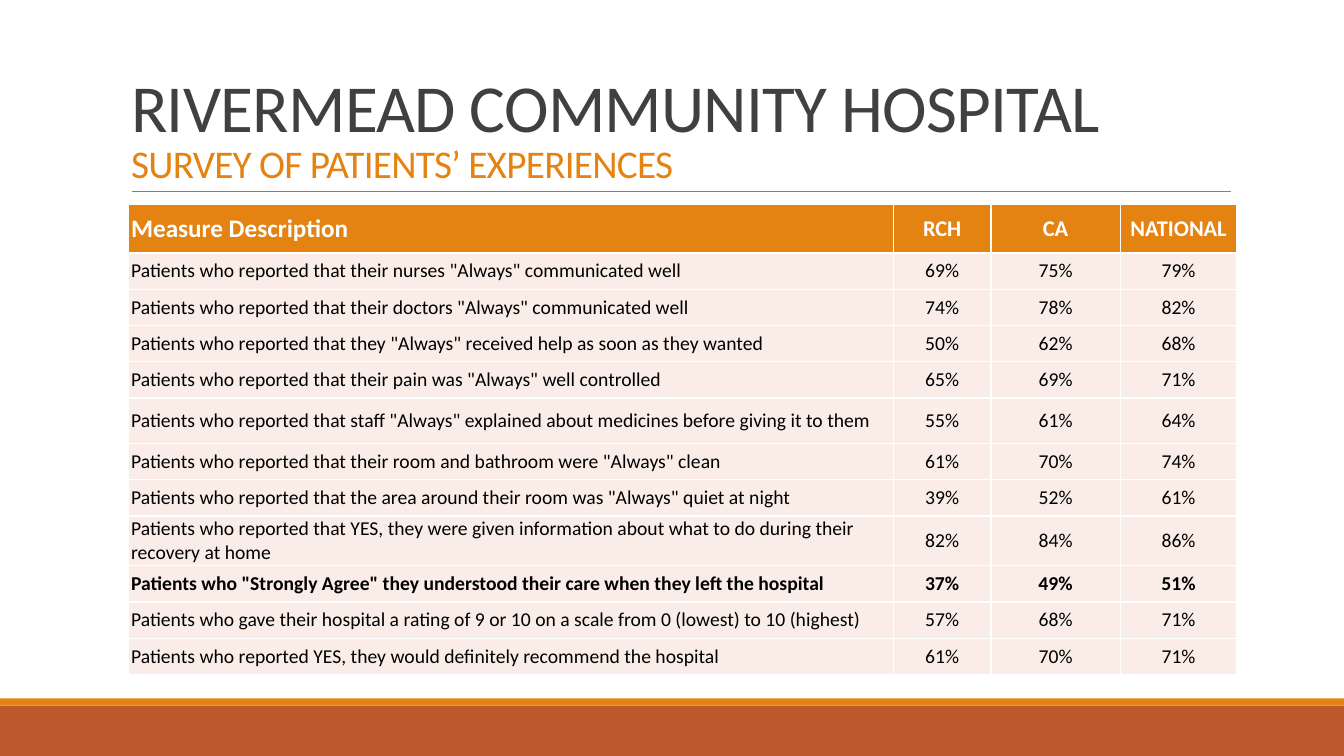
from dataclasses import dataclass

from lxml.etree import SubElement
from pptx import Presentation
from pptx.dml.color import RGBColor
from pptx.enum.shapes import MSO_CONNECTOR, MSO_SHAPE
from pptx.enum.text import MSO_ANCHOR, MSO_AUTO_SIZE, PP_ALIGN
from pptx.oxml.ns import qn
from pptx.util import Inches, Pt


@dataclass(frozen=True)
class Theme:
    font: str = "Calibri"
    orange: str = "E48312"
    rust: str = "BD582C"
    pale: str = "FAEDE7"
    grey: str = "808080"
    dark: str = "404040"
    black: str = "000000"
    white: str = "FFFFFF"
    title_size: int = 48
    subtitle_size: int = 28
    first_header_size: int = 18
    header_size: int = 16
    body_size: int = 14


HEADERS = ("Measure Description", "RCH", "CA", "NATIONAL")
MEASURES = [
    ('Patients who reported that their nurses "Always" communicated well', 69, 75, 79),
    ('Patients who reported that their doctors "Always" communicated well', 74, 78, 82),
    ('Patients who reported that they "Always" received help as soon as they wanted', 50, 62, 68),
    ('Patients who reported that their pain was "Always" well controlled', 65, 69, 71),
    ('Patients who reported that staff "Always" explained about medicines before giving it to them', 55, 61, 64),
    ('Patients who reported that their room and bathroom were "Always" clean', 61, 70, 74),
    ('Patients who reported that the area around their room was "Always" quiet at night', 39, 52, 61),
    ("Patients who reported that YES, they were given information about what to do during their "
     "recovery at home", 82, 84, 86),
    ('Patients who "Strongly Agree" they understood their care when they left the hospital', 37, 49, 51),
    ("Patients who gave their hospital a rating of 9 or 10 on a scale from 0 (lowest) to 10 (highest)", 57, 68, 71),
    ("Patients who reported YES, they would definitely recommend the hospital", 61, 70, 71),
]
EMPHASIZED_ROW = 9
COLUMN_WIDTHS = (7.59, 0.97, 1.28, 1.16)
HEADER_HEIGHT, ROW_HEIGHT, TALL_ROW_HEIGHT = 0.48, 0.36, 0.45
TALL_ROWS = (5, 8)


def apply_format(target, values):
    for name, value in values.items():
        setattr(target, name, value)


class SlideBuilder:
    def __init__(self, presentation, theme):
        self.theme = theme
        self.slide = presentation.slides.add_slide(presentation.slide_layouts[5])

    def add_run(self, paragraph, text, size, color, bold=False):
        run = paragraph.add_run()
        run.text = text
        apply_format(run.font, {"name": self.theme.font, "size": Pt(size), "bold": bold})
        run.font.color.rgb = RGBColor.from_string(color)
        return run

    def add_bar(self, left, top, width, height, color):
        bar = self.slide.shapes.add_shape(
            MSO_SHAPE.RECTANGLE, Inches(left), Inches(top), Inches(width), Inches(height))
        bar.shadow.inherit = False
        bar.fill.solid()
        bar.fill.fore_color.rgb = RGBColor.from_string(color)
        bar.line.fill.background()

    def add_rule(self, left, right, top, color, weight):
        rule = self.slide.shapes.add_connector(
            MSO_CONNECTOR.STRAIGHT, Inches(left), Inches(top), Inches(right), Inches(top))
        rule.line.color.rgb = RGBColor.from_string(color)
        rule.line.width = Pt(weight)
        SubElement(rule._element.spPr, qn("a:effectLst"))

    def set_title(self, title, subtitle):
        shape = self.slide.shapes.title
        apply_format(shape, {"left": Inches(1.2), "top": Inches(0.31),
                             "width": Inches(11), "height": Inches(1.59)})
        apply_format(shape.text_frame, {"word_wrap": True, "auto_size": MSO_AUTO_SIZE.NONE,
                                        "vertical_anchor": MSO_ANCHOR.BOTTOM})
        paragraph = shape.text_frame.paragraphs[0]
        apply_format(paragraph, {"alignment": PP_ALIGN.LEFT, "line_spacing": 0.85})
        theme = self.theme
        runs = [self.add_run(paragraph, title, theme.title_size, theme.dark)]
        paragraph.add_line_break()
        runs.append(self.add_run(paragraph, subtitle, theme.subtitle_size, theme.orange))
        for run in runs:
            run.font._element.set("spc", "-50")

    def add_borders(self, cell, color, weight):
        properties = cell._tc.get_or_add_tcPr()
        for side in ("lnL", "lnR", "lnT", "lnB"):
            line = SubElement(properties, qn(f"a:{side}"), w=str(Pt(weight)))
            SubElement(SubElement(line, qn("a:solidFill")), qn("a:srgbClr"), val=color)

    def fill_cell(self, cell, text, alignment, fill, size, color, bold):
        apply_format(cell, {"vertical_anchor": MSO_ANCHOR.MIDDLE,
                            "margin_left": Inches(0.03), "margin_right": Inches(0.03),
                            "margin_top": Inches(0.01), "margin_bottom": Inches(0.01)})
        self.add_borders(cell, self.theme.white, 1)
        cell.fill.solid()
        cell.fill.fore_color.rgb = RGBColor.from_string(fill)
        paragraph = cell.text_frame.paragraphs[0]
        paragraph.alignment = alignment
        self.add_run(paragraph, text, size, color, bold)

    def add_survey_table(self, left, top):
        theme = self.theme
        rows = [HEADERS] + [(measure, *(f"{score}%" for score in scores))
                            for measure, *scores in MEASURES]
        heights = [HEADER_HEIGHT] + [TALL_ROW_HEIGHT if index in TALL_ROWS else ROW_HEIGHT
                                     for index in range(1, len(rows))]
        table = self.slide.shapes.add_table(
            len(rows), len(HEADERS), Inches(left), Inches(top),
            Inches(sum(COLUMN_WIDTHS)), Inches(sum(heights))).table
        table.horz_banding = False
        for column, width in zip(table.columns, COLUMN_WIDTHS):
            column.width = Inches(width)
        for row_index, (values, height) in enumerate(zip(rows, heights)):
            table.rows[row_index].height = Inches(height)
            header = row_index == 0
            fill, color = (theme.orange, theme.white) if header else (theme.pale, theme.black)
            for column_index, text in enumerate(values):
                first = column_index == 0
                size = theme.body_size
                if header:
                    size = theme.first_header_size if first else theme.header_size
                self.fill_cell(table.cell(row_index, column_index), text,
                               PP_ALIGN.LEFT if first else PP_ALIGN.CENTER,
                               fill, size, color, header or row_index == EMPHASIZED_ROW)


def main():
    presentation = Presentation()
    apply_format(presentation, {"slide_width": Inches(13.33), "slide_height": Inches(7.5)})
    theme = Theme()
    builder = SlideBuilder(presentation, theme)
    builder.add_bar(0, 7, 13.33, 0.5, theme.rust)
    builder.add_bar(0, 6.93, 13.33, 0.07, theme.orange)
    builder.add_rule(1.31, 12.21, 1.9, theme.grey, 0.5)
    builder.set_title("RIVERMEAD COMMUNITY HOSPITAL", "SURVEY OF PATIENTS’ EXPERIENCES")
    builder.add_survey_table(1.27, 2.03)
    presentation.save("out.pptx")


if __name__ == "__main__":
    main()
